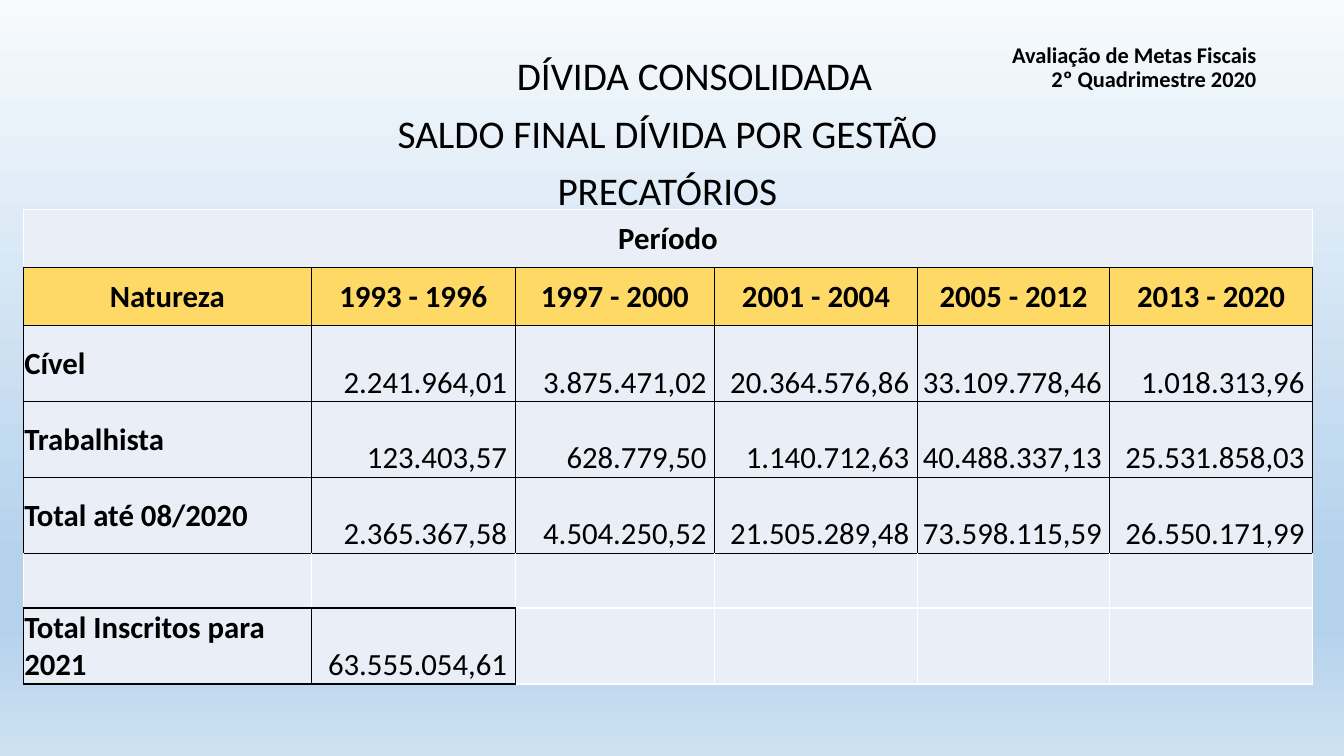
from copy import deepcopy
from dataclasses import dataclass

from lxml import etree
from pptx import Presentation
from pptx import util as u
from pptx.dml.color import RGBColor
from pptx.enum import text
from pptx.oxml.ns import qn

BLACK = RGBColor(0x00, 0x00, 0x00)
WHITE = RGBColor(0xFF, 0xFF, 0xFF)
GOLD = RGBColor(0xFF, 0xD9, 0x66)
PALE = RGBColor(0xEA, 0xEF, 0xF7)
SKY = RGBColor(0xB5, 0xD2, 0xEC)
BACKDROP = [(0, RGBColor(0xF7, 0xFA, 0xFD)), (0.74, SKY), (0.83, SKY),
            (1, RGBColor(0xCE, 0xE1, 0xF2))]

FONT = "Calibri"
SLIDE_W, SLIDE_H = u.Inches(13.33), u.Inches(7.5)
ALIGN, ANCHOR = text.PP_ALIGN, text.MSO_ANCHOR

TABLE_LEFT, TABLE_TOP = 1.73, 27.69
COLUMNS = [21.45, 15.15, 14.85, 15.08, 14.33, 15.08]
HEADER_ROW, VALUE_ROW, GAP_ROW = 7.67, 10.05, 7.27
ROWS = [HEADER_ROW] * 2 + [VALUE_ROW] * 3 + [GAP_ROW, VALUE_ROW]
CELLS = [
    ["Período"],
    ["Natureza", "1993 - 1996", "1997 - 2000", "2001 - 2004", "2005 - 2012", "2013 - 2020"],
    ["Cível", "2.241.964,01", "3.875.471,02", "20.364.576,86", "33.109.778,46", "1.018.313,96"],
    ["Trabalhista", "123.403,57", "628.779,50", "1.140.712,63", "40.488.337,13", "25.531.858,03"],
    ["Total até 08/2020", "2.365.367,58", "4.504.250,52", "21.505.289,48", "73.598.115,59",
     "26.550.171,99"],
    [],
    ["Total Inscritos para 2021", "63.555.054,61"],
]
PERIOD, HEADINGS, GAP, ENROLLED = 0, 1, 5, 6


@dataclass
class Heading:
    left: float
    top: float
    width: float
    height: float
    lines: list[str]
    size: int
    align: ALIGN = ALIGN.CENTER
    anchor: ANCHOR = ANCHOR.TOP
    bold: bool = False


HEADINGS_TEXT = [
    Heading(12.53, 4.4, 81.7, 8.53, ["Avaliação de Metas Fiscais\v2º Quadrimestre 2020"], 16,
            ALIGN.RIGHT, ANCHOR.BOTTOM, True),
    Heading(14.18, 6.8, 75, 8.53, ["DÍVIDA CONSOLIDADA"], 28),
    Heading(12.15, 14.53, 75, 16.67, ["SALDO FINAL DÍVIDA POR GESTÃO", "PRECATÓRIOS"], 28),
]


def across(percent: float) -> int:
    return round(SLIDE_W * percent / 100)


def down(percent: float) -> int:
    return round(SLIDE_H * percent / 100)


def style(p, size: int, bold: bool, align: ALIGN) -> None:
    p.alignment = align
    p.font.name, p.font.size, p.font.bold = FONT, u.Pt(size), bold
    p.font.color.rgb = BLACK


def paint_background(s) -> None:
    fill = s.background.fill
    fill.gradient()
    fill.gradient_angle = 270
    stops = s.element.find(".//" + qn("a:gsLst"))
    while len(stops) < len(BACKDROP):
        stops.append(deepcopy(stops[0]))
    for stop, (position, color) in zip(fill.gradient_stops, BACKDROP):
        stop.position, stop.color.rgb = position, color


def add_heading(s, h: Heading) -> None:
    sp = s.shapes.add_textbox(across(h.left), down(h.top), across(h.width), down(h.height))
    tf = sp.text_frame
    tf.word_wrap, tf.vertical_anchor = True, h.anchor
    for i, line in enumerate(h.lines):
        p = tf.paragraphs[0] if i == 0 else tf.add_paragraph()
        p.text = line
        p.line_spacing = 0.9
        p.space_before = u.Pt(10 if i else 0)
        style(p, h.size, h.bold, h.align)


def edge_colors(row: int, col: int) -> dict[str, RGBColor]:
    edges = dict.fromkeys("LRTB", BLACK)
    if row == PERIOD:
        edges.update(L=WHITE, R=WHITE, T=WHITE)
    elif row == GAP:
        edges.update(L=WHITE, R=WHITE, B=BLACK if col < 2 else WHITE)
    elif row == ENROLLED and col >= 2:
        edges.update(L=BLACK if col == 2 else WHITE, R=WHITE, T=WHITE, B=WHITE)
    return edges


def draw_borders(cell, edges: dict[str, RGBColor]) -> None:
    tc_pr = cell._tc.get_or_add_tcPr()
    for side, color in edges.items():
        ln = etree.SubElement(tc_pr, qn(f"a:ln{side}"), w=str(u.Pt(1)))
        solid = etree.SubElement(ln, qn("a:solidFill"))
        etree.SubElement(solid, qn("a:srgbClr"), val=str(color))


def fill_cell(cell, row: int, col: int) -> None:
    draw_borders(cell, edge_colors(row, col))
    cell.fill.solid()
    cell.fill.fore_color.rgb = GOLD if row == HEADINGS else PALE
    if col >= len(CELLS[row]):
        return
    heading = row <= HEADINGS
    value = not heading and col > 0
    cell.margin_left = cell.margin_top = u.Inches(0.01)
    cell.margin_right = u.Inches(0.08 if value else 0.01)
    cell.margin_bottom = 0
    cell.vertical_anchor = ANCHOR.BOTTOM if value else ANCHOR.MIDDLE
    p = cell.text_frame.paragraphs[0]
    p.text = CELLS[row][col]
    style(p, 22, not value, ALIGN.CENTER if heading else ALIGN.RIGHT if value else ALIGN.LEFT)


def add_debt_table(s) -> None:
    table = s.shapes.add_table(len(ROWS), len(COLUMNS), across(TABLE_LEFT), down(TABLE_TOP),
                               across(sum(COLUMNS)), down(sum(ROWS))).table
    table.first_row = table.horz_banding = False
    for column, width in zip(table.columns, COLUMNS):
        column.width = across(width)
    for table_row, height in zip(table.rows, ROWS):
        table_row.height = down(height)
    table.cell(PERIOD, 0).merge(table.cell(PERIOD, len(COLUMNS) - 1))
    for row in range(len(ROWS)):
        for col in range(len(COLUMNS)):
            fill_cell(table.cell(row, col), row, col)


def main() -> None:
    prs = Presentation()
    prs.slide_width, prs.slide_height = SLIDE_W, SLIDE_H
    s = prs.slides.add_slide(prs.slide_layouts[6])
    paint_background(s)
    for heading in HEADINGS_TEXT:
        add_heading(s, heading)
    add_debt_table(s)
    prs.save("out.pptx")


if __name__ == "__main__":
    main()
